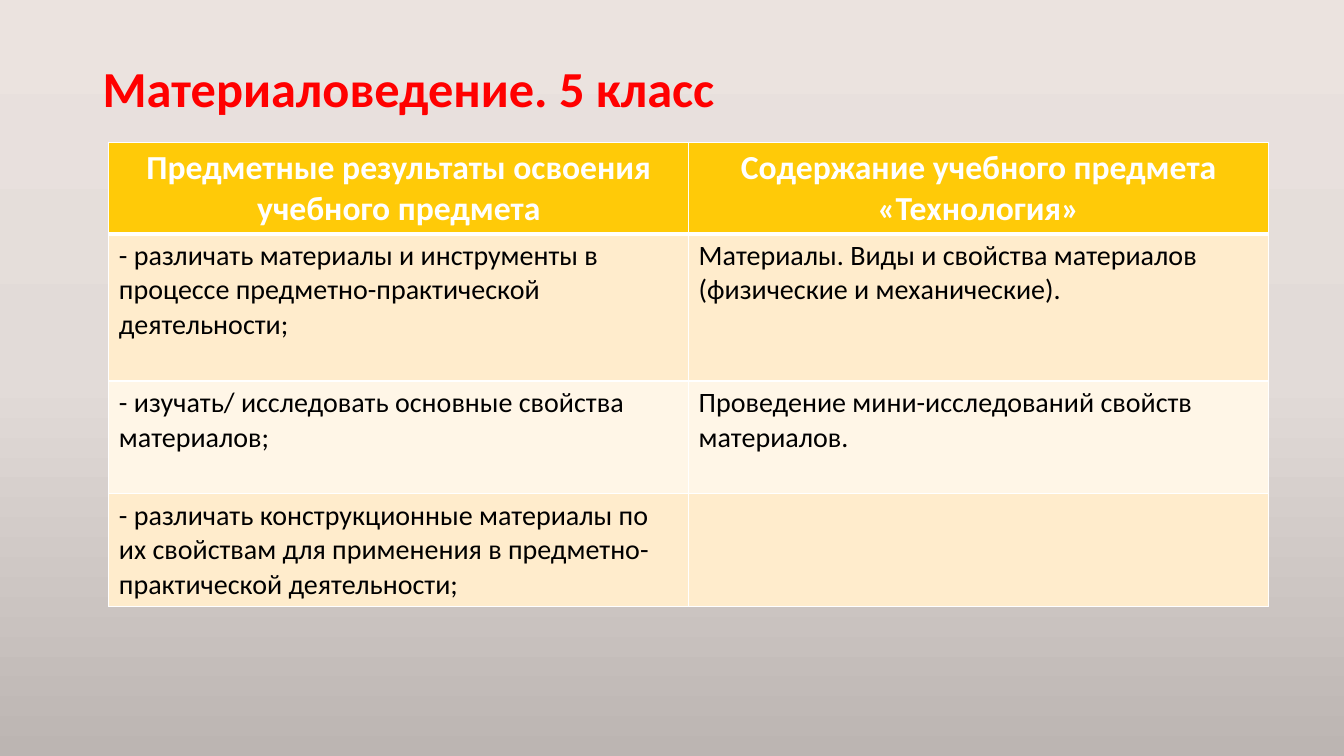
from copy import deepcopy

from pptx import Presentation
from pptx.dml.color import RGBColor as RGB
from pptx.enum.text import MSO_ANCHOR as ANCHOR, PP_ALIGN as ALIGN
from pptx.oxml import parse_xml
from pptx.oxml.ns import nsdecls, qn
from pptx.util import Inches, Pt

RED = RGB(0xFF, 0x00, 0x00)
WHITE = RGB(0xFF, 0xFF, 0xFF)
BLACK = RGB(0x00, 0x00, 0x00)
AMBER = RGB(0xFF, 0xCA, 0x08)
BANDS = [RGB(0xFF, 0xF6, 0xE7), RGB(0xFF, 0xEC, 0xCC)]
BACKDROP = [RGB(0xEB, 0xE3, 0xDF), RGB(0xE2, 0xDB, 0xD8), RGB(0xBC, 0xB5, 0xB2)]
FONT = "Calibri"

TITLE = "Материаловедение. 5 класс"
ROWS = [
    ("Предметные результаты освоения учебного предмета",
     "Содержание учебного предмета «Технология»"),
    ("- различать материалы и инструменты в процессе предметно-практической деятельности;",
     "Материалы. Виды и свойства материалов (физические и механические)."),
    ("- изучать/ исследовать основные свойства материалов;",
     "Проведение мини-исследований свойств материалов."),
    ("- различать конструкционные материалы по их свойствам для применения "
     "в предметно-практической деятельности;", ""),
]
ROW_HEIGHTS = [0.91, 1.46, 1.12, 1.12]


def paint_background(s):
    """Fill the slide with a vertical gradient of evenly spaced stops."""
    fill = s.background.fill
    fill.gradient()
    fill.gradient_angle = 270
    stops = s.element.find(".//" + qn("a:gsLst"))
    stops.insert(1, deepcopy(stops[0]))
    for i, (stop, color) in enumerate(zip(fill.gradient_stops, BACKDROP)):
        stop.position = i / (len(BACKDROP) - 1)
        stop.color.rgb = color


def style_runs(p, size, color, bold):
    """Format every run of a paragraph."""
    for r in p.runs:
        r.font.name = FONT
        r.font.size = Pt(size)
        r.font.bold = bold
        r.font.color.rgb = color


def add_title(s, x, y, w, h):
    """Place the slide heading in the given box."""
    tf = s.shapes.add_textbox(Inches(x), Inches(y), Inches(w), Inches(h)).text_frame
    tf.word_wrap = True
    tf.vertical_anchor = ANCHOR.MIDDLE
    p = tf.paragraphs[0]
    p.text = TITLE
    p.line_spacing = 0.9
    style_runs(p, 36, RED, True)


def add_borders(cell, top, bottom):
    """Draw white cell borders with the given top and bottom widths."""
    tc_pr = cell._tc.get_or_add_tcPr()
    for side, width in (("L", 1), ("R", 1), ("T", top), ("B", bottom)):
        tc_pr.append(parse_xml(
            f'<a:ln{side} {nsdecls("a")} w="{Pt(width)}"><a:solidFill>'
            f'<a:srgbClr val="{WHITE}"/></a:solidFill></a:ln{side}>'))


def add_results_table(s, x, y, w):
    """Place the results and content table with equal columns."""
    cols = len(ROWS[0])
    table = s.shapes.add_table(len(ROWS), cols, Inches(x), Inches(y), Inches(w),
                               Inches(sum(ROW_HEIGHTS))).table
    for column in table.columns:
        column.width = Inches(w / cols)
    for i, (texts, height) in enumerate(zip(ROWS, ROW_HEIGHTS)):
        table.rows[i].height = Inches(height)
        header = i == 0
        for j, text in enumerate(texts):
            cell = table.cell(i, j)
            add_borders(cell, 3 if i == 1 else 1, 3 if header else 1)
            cell.fill.solid()
            cell.fill.fore_color.rgb = AMBER if header else BANDS[i % 2]
            p = cell.text_frame.paragraphs[0]
            p.text = text
            p.alignment = ALIGN.CENTER if header else ALIGN.LEFT
            style_runs(p, 24 if header else 20, WHITE if header else BLACK, header)


def main():
    """Build and save the presentation."""
    prs = Presentation()
    prs.slide_width, prs.slide_height = Inches(13.33), Inches(7.5)
    s = prs.slides.add_slide(prs.slide_layouts[6])
    paint_background(s)
    add_title(s, 0.92, 0.4, 11.5, 1.01)
    add_results_table(s, 1.08, 1.41, 11.5)
    prs.save("out.pptx")


if __name__ == "__main__":
    main()
